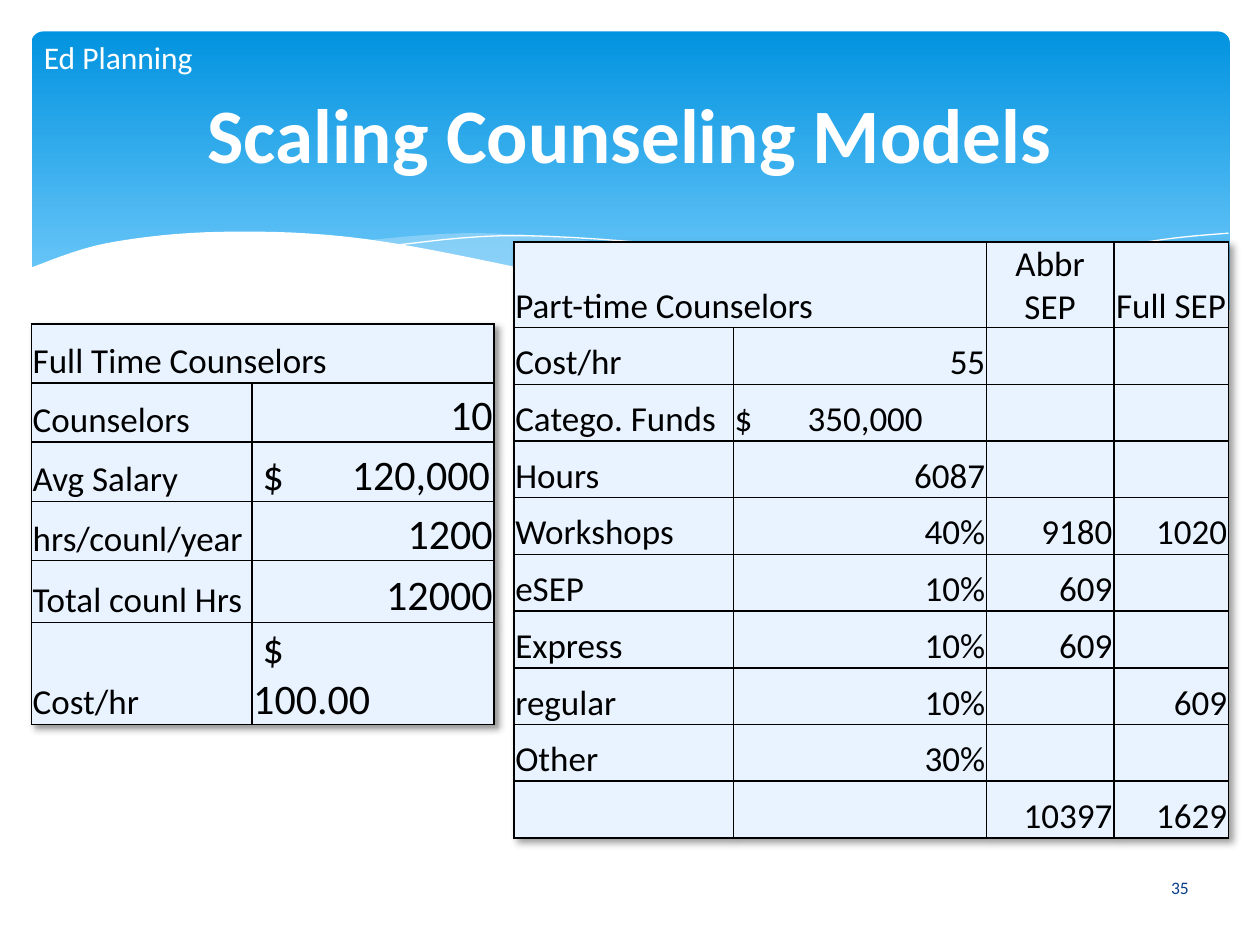
from dataclasses import dataclass
from itertools import pairwise
from typing import Optional

from lxml.etree import SubElement
from pptx import Presentation
from pptx.dml.color import RGBColor as RGB
from pptx.enum.shapes import MSO_SHAPE as Shape
from pptx.enum.text import MSO_ANCHOR as Anchor, PP_ALIGN as Align
from pptx.oxml import parse_xml
from pptx.oxml.ns import nsdecls, qn
from pptx.util import Inches, Pt

Point = tuple[float, float]


@dataclass(frozen=True)
class Theme:
    font: str = "Calibri"
    white: str = "FFFFFF"
    black: str = "000000"
    sky: str = "0293E0"
    pale_sky: str = "83D3FE"
    mist: str = "C6E7FC"
    cell: str = "E8F3FF"
    navy: str = "073E87"
    title: int = 44
    figure: int = 24
    body: int = 20
    tag: int = 18
    number: int = 10


@dataclass(frozen=True)
class Wave:
    edges: list[list[Point]]
    fill: Optional[str] = None
    opacity: int = 100


@dataclass(frozen=True)
class Grid:
    left: float
    top: float
    widths: list[float]
    heights: list[float]
    rows: list[list[str]]
    figure_size: int
    tab: float
    tab_align: str


@dataclass(frozen=True)
class Label:
    text: str
    box: tuple[float, float, float, float]
    size: int
    color: str
    bold: bool = False
    align: Align = Align.CENTER
    anchor: Anchor = Anchor.MIDDLE


T = Theme()
CURVE_STEPS = 8

WAVES = [
    Wave([[(9.76, 2), (8.61, 2.23), (6.61, 2.65)],
          [(6.61, 2.65), (8.03, 2.78), (9.05, 2.69), (9.76, 2.47)]], T.mist, 29),
    Wave([[(8.93, 2.73), (7.75, 2.54), (6.29, 2.22), (4.89, 1.94), (3.8, 1.85), (2.86, 1.91)],
          [(2.86, 1.91), (4.49, 2.22), (6.5, 2.64), (7.85, 2.78), (8.93, 2.73)]], T.mist, 40),
    Wave([[(3.09, 1.95), (4.16, 1.87), (5.82, 2), (7.27, 2.26), (9.07, 2.72)]]),
    Wave([[(6.13, 2.57), (7.76, 2.16), (9.1, 1.92), (9.75, 1.85)]]),
    Wave([[(9.77, 2.46), (8.75, 2.73), (7.44, 2.74), (5.55, 2.45), (4.47, 2.2),
           (2.92, 1.9), (1.77, 1.84), (0.85, 1.93), (0.23, 2.13)],
          [(0.23, 3.29), (9.77, 3.29)]], T.white),
]

LABELS = [
    Label("Scaling Counseling Models", (0.5, 0.37, 9, 1.37), T.title, T.white, True),
    Label("35", (8.73, 6.84, 1.27, 0.4), T.number, T.navy),
    Label("Ed Planning", (0.25, 0.25, 1.83, 0.4), T.tag, T.white,
          align=Align.LEFT, anchor=Anchor.TOP),
]

GRIDS = [
    Grid(4.08, 1.92, [1.74, 2.01, 1.01, 0.91], [0.68] + [0.45] * 9, [
        ["Part-time Counselors", "", "Abbr SEP", "Full SEP"],
        ["Cost/hr", "55", "", ""],
        ["Catego. Funds", "$\t350,000", "", ""],
        ["Hours", "6087", "", ""],
        ["Workshops", "40%", "9180", "1020"],
        ["eSEP", "10%", "609", ""],
        ["Express", "10%", "609", ""],
        ["regular", "10%", "", "609"],
        ["Other", "30%", "", ""],
        ["", "", "10397", "1629"],
    ], T.body, 0.58, "l"),
    Grid(0.25, 2.57, [1.75, 1.92], [0.47] * 4 + [0.49, 0.81], [
        ["Full Time Counselors", ""],
        ["Counselors", "10"],
        ["Avg Salary", " $\t120,000"],
        ["hrs/counl/year", "1200"],
        ["Total counl Hrs", "12000"],
        ["Cost/hr", " $\n100.00"],
    ], T.figure, 1.88, "r"),
]


def add_run(p, text: str, size: int, color: str, bold: bool = False) -> None:
    r = p.add_run()
    r.text = text
    r.font.name, r.font.size, r.font.bold = T.font, Pt(size), bold
    r.font.color.rgb = RGB.from_string(color)


def draw_banner(s) -> None:
    sp = s.shapes.add_shape(Shape.ROUNDED_RECTANGLE, *map(Inches, (0.25, 0.25, 9.51, 2.7)))
    sp.adjustments[0] = 0.034
    sp.shadow.inherit = False
    sp.line.fill.background()
    sp.fill.gradient()
    sp.fill.gradient_angle = 270
    for stop, color, position in zip(sp.fill.gradient_stops, (T.sky, T.pale_sky), (0, 0.9)):
        stop.color.rgb = RGB.from_string(color)
        stop.position = position


def smooth(knots: list[Point]) -> list[Point]:
    padded = [knots[0], *knots, knots[-1]]
    points = [knots[0]]
    for i, (start, end) in enumerate(pairwise(knots)):
        before, after = padded[i], padded[i + 3]
        for step in range(1, CURVE_STEPS + 1):
            t = step / CURVE_STEPS
            ease = t * t * (3 - 2 * t)
            leave, arrive = t * (1 - t) ** 2 / 2, t * t * (t - 1) / 2
            points.append(tuple(
                a + (b - a) * ease + (b - prior) * leave + (later - a) * arrive
                for prior, a, b, later in zip(before, start, end, after)))
    return points


def draw_wave(s, wave: Wave) -> None:
    start, *rest = [(Inches(x), Inches(y)) for edge in wave.edges for x, y in smooth(edge)]
    builder = s.shapes.build_freeform(*start)
    builder.add_line_segments(rest, close=wave.fill is not None)
    sp = builder.convert_to_shape()
    sp.shadow.inherit = False
    if wave.fill is None:
        sp.fill.background()
        sp.line.color.rgb = RGB.from_string(T.white)
        sp.line.width = Pt(0)
        return
    sp.line.fill.background()
    sp.fill.solid()
    sp.fill.fore_color.rgb = RGB.from_string(wave.fill)
    if wave.opacity < 100:
        color = sp._element.spPr.find(qn("a:solidFill"))[0]
        SubElement(color, qn("a:alpha"), val=str(wave.opacity * 1000))


def draw_label(s, label: Label) -> None:
    tf = s.shapes.add_textbox(*map(Inches, label.box)).text_frame
    tf.word_wrap, tf.vertical_anchor = True, label.anchor
    p = tf.paragraphs[0]
    p.alignment = label.align
    add_run(p, label.text, label.size, label.color, label.bold)


def style_cell(cell) -> None:
    cell.margin_left = cell.margin_right = cell.margin_top = Inches(0.01)
    cell.margin_bottom = 0
    cell.vertical_anchor = Anchor.BOTTOM
    tc_pr = cell._tc.get_or_add_tcPr()
    for side in "LRTB":
        tc_pr.append(parse_xml(
            f'<a:ln{side} {nsdecls("a")} w="{Pt(1)}"><a:solidFill>'
            f'<a:srgbClr val="{T.black}"/></a:solidFill></a:ln{side}>'))
    cell.fill.solid()
    cell.fill.fore_color.rgb = RGB.from_string(T.cell)


def fill_cell(cell, text: str, row: int, col: int, grid: Grid) -> None:
    p = cell.text_frame.paragraphs[0]
    if col and not row:
        p.alignment = Align.CENTER
    elif col and "$" not in text:
        p.alignment = Align.RIGHT
    if "\t" in text:
        tabs = SubElement(p._p.get_or_add_pPr(), qn("a:tabLst"))
        SubElement(tabs, qn("a:tab"), pos=str(Inches(grid.tab)), algn=grid.tab_align)
    for i, line in enumerate(text.split("\n")):
        if i:
            p.add_line_break()
        add_run(p, line, grid.figure_size if row and col else T.body, T.black)


def draw_grid(s, grid: Grid) -> None:
    box = map(Inches, (grid.left, grid.top, sum(grid.widths), sum(grid.heights)))
    table = s.shapes.add_table(len(grid.heights), len(grid.widths), *box).table
    table.first_row = table.horz_banding = False
    table._tbl.tblPr.insert(0, parse_xml(
        f'<a:effectLst {nsdecls("a")}><a:outerShdw blurRad="{Pt(4)}" dist="{Pt(3)}" '
        f'dir="2700000" algn="tl" rotWithShape="0"><a:srgbClr val="{T.black}">'
        '<a:alpha val="40000"/></a:srgbClr></a:outerShdw></a:effectLst>'))
    for column, width in zip(table.columns, grid.widths):
        column.width = Inches(width)
    for row, height in zip(table.rows, grid.heights):
        row.height = Inches(height)
    for i, texts in enumerate(grid.rows):
        for j, text in enumerate(texts):
            style_cell(table.cell(i, j))
            if text:
                fill_cell(table.cell(i, j), text, i, j, grid)
    table.cell(0, 0).merge(table.cell(0, 1))


def main() -> None:
    prs = Presentation()
    prs.slide_width, prs.slide_height = Inches(10), Inches(7.5)
    s = prs.slides.add_slide(prs.slide_layouts[6])
    draw_banner(s)
    for draw, items in ((draw_wave, WAVES), (draw_label, LABELS), (draw_grid, GRIDS)):
        for item in items:
            draw(s, item)
    prs.save("out.pptx")


if __name__ == "__main__":
    main()
